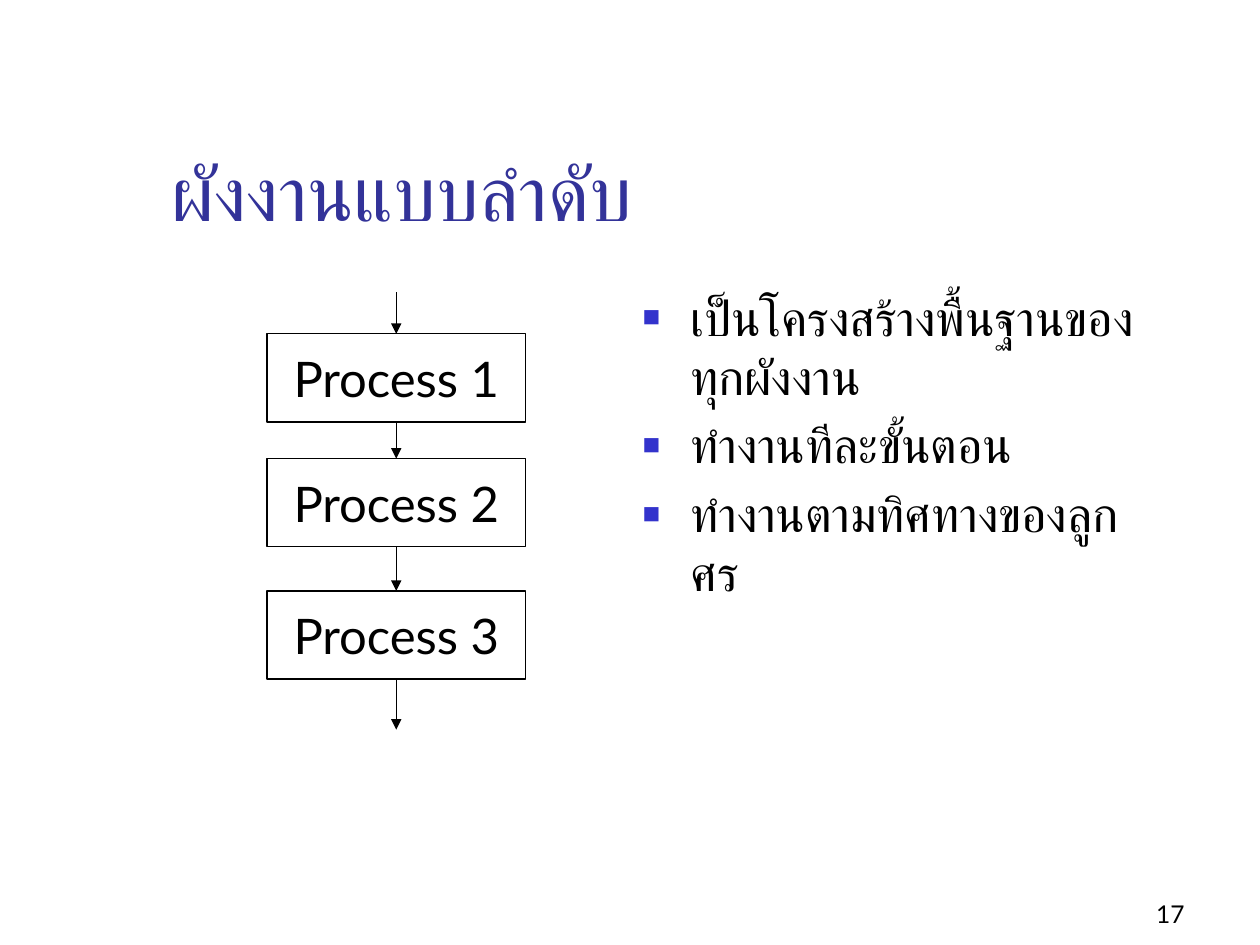
from dataclasses import dataclass
from itertools import pairwise
from lxml.etree import SubElement
from pptx import Presentation
from pptx.dml.color import RGBColor
from pptx.enum.shapes import MSO_CONNECTOR, MSO_SHAPE
from pptx.enum.text import MSO_ANCHOR, MSO_AUTO_SIZE, PP_ALIGN
from pptx.oxml.ns import qn
from pptx.util import Inches, Pt


@dataclass(frozen=True)
class Theme:
    font: str = "Lato"
    title: str = "333399"
    bullet: str = "3333CC"
    ink: str = "000000"
    paper: str = "FFFFFF"
    title_size: int = 44
    body_size: int = 28
    number_size: int = 14
    line: float = 0.75


THEME = Theme()
WIDTH, HEIGHT = 10, 7.5
BOX_LEFT, BOX_WIDTH, BOX_HEIGHT = 2.12, 2.05, 0.7
BOX_TOPS = (2.65, 3.64, 4.69)
FLOW_START, FLOW_END = 2.32, 5.79
POINTS = (
    "เป็นโครงสร้างพื้นฐานของทุกผังงาน",
    "ทำงานทีละขั้นตอน",
    "ทำงานตามทิศทางของลูกศร",
)


def apply(target, values):
    for name, value in values.items():
        setattr(target, name, value)


def place(shape, left, top, width, height):
    apply(shape, {"left": Inches(left), "top": Inches(top),
                  "width": Inches(width), "height": Inches(height)})


def write(p, text, size, color, align=PP_ALIGN.LEFT):
    p.alignment = align
    r = p.add_run()
    r.text = text
    apply(r.font, {"name": THEME.font, "size": Pt(size)})
    r.font.color.rgb = RGBColor.from_string(color)
    SubElement(r.font._element, qn("a:cs"), typeface=THEME.font)


def add_bullet(p):
    pPr = p._p.get_or_add_pPr()
    pPr.set("marL", str(Inches(0.38)))
    pPr.set("indent", str(Inches(-0.38)))
    color = SubElement(pPr, qn("a:buClr"))
    SubElement(color, qn("a:srgbClr"), val=THEME.bullet)
    SubElement(pPr, qn("a:buSzPct"), val="60000")
    SubElement(pPr, qn("a:buFont"), typeface="Arial")
    SubElement(pPr, qn("a:buChar"), char="■")


def fill_title(s, text):
    sp = s.shapes.title
    place(sp, 1.26, 0.68, 8.52, 1.25)
    tf = sp.text_frame
    apply(tf, {"vertical_anchor": MSO_ANCHOR.BOTTOM,
               "auto_size": MSO_AUTO_SIZE.NONE})
    write(tf.paragraphs[0], text, THEME.title_size, THEME.title)


def fill_body(s, points):
    sp = s.placeholders[1]
    place(sp, WIDTH / 2, 2.23, 4.3, HEIGHT * 0.6)
    tf = sp.text_frame
    tf.auto_size = MSO_AUTO_SIZE.NONE
    for i, text in enumerate(points):
        p = tf.add_paragraph() if i else tf.paragraphs[0]
        add_bullet(p)
        p.space_before = Pt(THEME.body_size * 0.2 if i else 0)
        write(p, text, THEME.body_size, THEME.ink)


def add_number(s, text):
    sp = s.shapes.add_textbox(0, 0, 0, 0)
    place(sp, 7.42, 6.92, 2.08, 0.5)
    tf = sp.text_frame
    apply(tf, {"word_wrap": True, "vertical_anchor": MSO_ANCHOR.BOTTOM})
    write(tf.paragraphs[0], text, THEME.number_size, THEME.ink, PP_ALIGN.RIGHT)


def style_line(line):
    line.width = Pt(THEME.line)
    line.color.rgb = RGBColor.from_string(THEME.ink)


def add_arrow(group, start, end):
    x = Inches(BOX_LEFT + BOX_WIDTH / 2)
    arrow = group.shapes.add_connector(
        MSO_CONNECTOR.STRAIGHT, x, Inches(start), x, Inches(end))
    style_line(arrow.line)
    SubElement(arrow.line._get_or_add_ln(), qn("a:tailEnd"), type="triangle")
    SubElement(arrow._element.spPr, qn("a:effectLst"))


def add_process(group, top, text):
    sp = group.shapes.add_shape(MSO_SHAPE.RECTANGLE, 0, 0, 0, 0)
    place(sp, BOX_LEFT, top, BOX_WIDTH, BOX_HEIGHT)
    sp.shadow.inherit = False
    sp.fill.solid()
    sp.fill.fore_color.rgb = RGBColor.from_string(THEME.paper)
    style_line(sp.line)
    tf = sp.text_frame
    apply(tf, {"margin_left": 0, "margin_right": 0, "margin_top": 0,
               "margin_bottom": 0, "word_wrap": False,
               "vertical_anchor": MSO_ANCHOR.MIDDLE})
    write(tf.paragraphs[0], text, THEME.body_size, THEME.ink, PP_ALIGN.CENTER)


def add_flow(s):
    group = s.shapes.add_group_shape()
    bottoms = [FLOW_START - BOX_HEIGHT, *BOX_TOPS]
    for above, below in pairwise([*bottoms, FLOW_END]):
        add_arrow(group, above + BOX_HEIGHT, below)
    for i, top in enumerate(BOX_TOPS, 1):
        add_process(group, top, f"Process {i}")


def main():
    prs = Presentation()
    apply(prs, {"slide_width": Inches(WIDTH), "slide_height": Inches(HEIGHT)})
    s = prs.slides.add_slide(prs.slide_layouts[1])
    fill_title(s, "ผังงานแบบลำดับ")
    fill_body(s, POINTS)
    add_number(s, "17")
    add_flow(s)
    prs.save("out.pptx")


if __name__ == "__main__":
    main()
